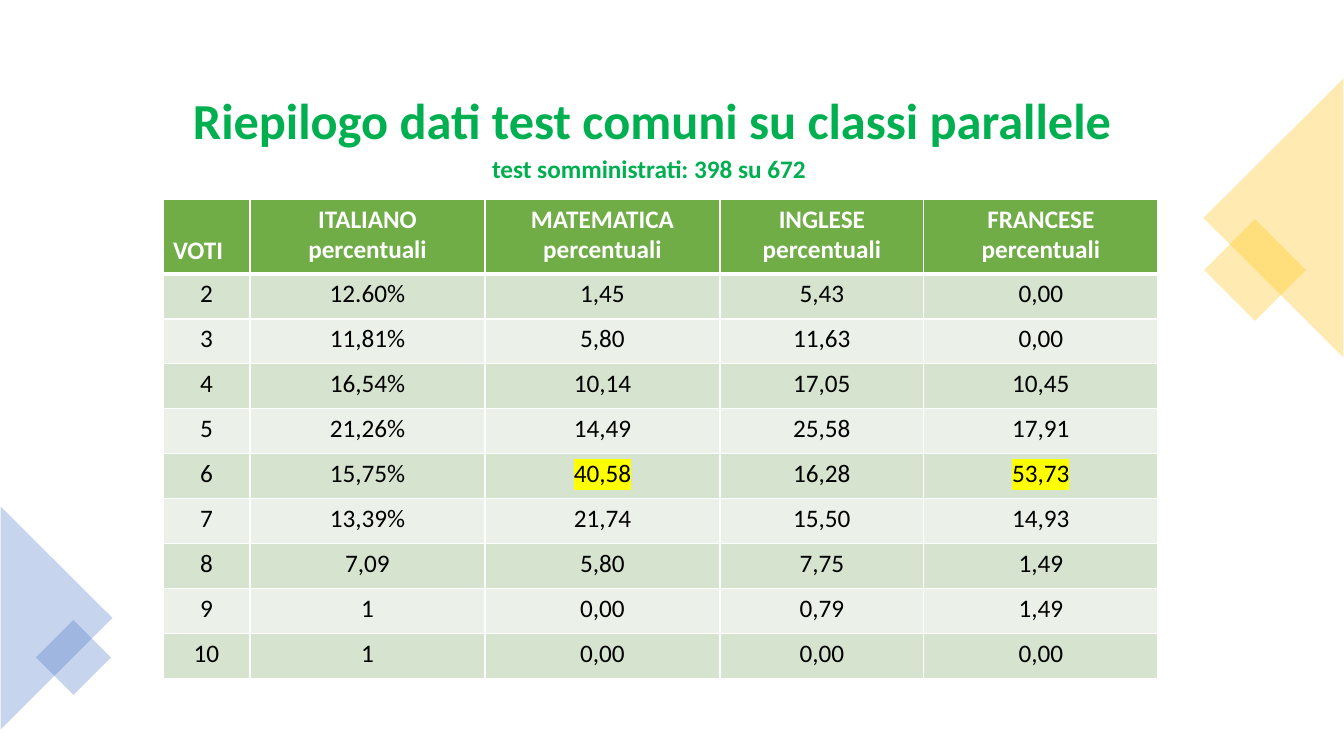
from dataclasses import dataclass
from typing import Optional

from lxml.etree import SubElement
from pptx import Presentation
from pptx.dml.color import RGBColor
from pptx.enum.shapes import MSO_SHAPE
from pptx.enum.text import MSO_ANCHOR, MSO_AUTO_SIZE, PP_ALIGN
from pptx.oxml import parse_xml
from pptx.oxml.ns import nsdecls, qn
from pptx.util import Emu, Pt

PX_PER_INCH = 100.8
GREEN, YELLOW, BLUE = "00B050", "FFC000", "4472C4"
HEADER_FILL, BANDS = "70AD47", ("D5E3CF", "EBF1E9")


def px(n: int) -> Emu:
    return Emu(round(n * 914400 / PX_PER_INCH))


def rgb(color: str) -> RGBColor:
    return RGBColor.from_string(color)


def write(tf, text: str, *, size: int = 18, color: str = "000000", bold: bool = False,
          align=PP_ALIGN.CENTER, spacing: Optional[float] = None,
          highlight: Optional[str] = None) -> None:
    """Fill a text frame, one paragraph for each line of text."""
    for i, line in enumerate(text.split("\n")):
        p = tf.paragraphs[0] if i == 0 else tf.add_paragraph()
        p.alignment = align
        if spacing:
            p.line_spacing = spacing
        r = p.add_run()
        r.text = line
        r.font.name, r.font.size, r.font.bold = "Calibri", Pt(size), bold
        r.font.color.rgb = rgb(color)
        if highlight:
            mark = parse_xml(f'<a:highlight {nsdecls("a")}><a:srgbClr val="{highlight}"/></a:highlight>')
            r.font.fill._xPr.find(qn("a:solidFill")).addnext(mark)


@dataclass
class Decoration:
    kind: MSO_SHAPE
    left: int
    top: int
    width: int
    height: int
    rotation: int
    color: str


DECORATIONS = [
    Decoration(MSO_SHAPE.RECTANGLE, 1219, 234, 72, 72, 45, YELLOW),
    Decoration(MSO_SHAPE.ISOSCELES_TRIANGLE, 1134, 148, 279, 140, 270, YELLOW),
    Decoration(MSO_SHAPE.ISOSCELES_TRIANGLE, -55, 562, 223, 112, 90, BLUE),
    Decoration(MSO_SHAPE.RECTANGLE, 47, 631, 53, 53, 45, BLUE),
]


def draw_decoration(s, d: Decoration) -> None:
    sp = s.shapes.add_shape(d.kind, px(d.left), px(d.top), px(d.width), px(d.height))
    sp.rotation = d.rotation
    sp.shadow.inherit = False
    sp.line.fill.background()
    sp.fill.solid()
    sp.fill.fore_color.rgb = rgb(d.color)
    clr = sp._element.spPr.find(qn("a:solidFill")).find(qn("a:srgbClr"))
    SubElement(clr, qn("a:alpha")).set("val", "30000")


HEADERS = ["VOTI"] + [f"{subject}\npercentuali"
                      for subject in ("ITALIANO", "MATEMATICA", "INGLESE", "FRANCESE")]
RESULTS = [
    ("2", "12.60%", "1,45", "5,43", "0,00"),
    ("3", "11,81%", "5,80", "11,63", "0,00"),
    ("4", "16,54%", "10,14", "17,05", "10,45"),
    ("5", "21,26%", "14,49", "25,58", "17,91"),
    ("6", "15,75%", "40,58", "16,28", "53,73"),
    ("7", "13,39%", "21,74", "15,50", "14,93"),
    ("8", "7,09", "5,80", "7,75", "1,49"),
    ("9", "1", "0,00", "0,79", "1,49"),
    ("10", "1", "0,00", "0,00", "0,00"),
]
PEAKS = ("40,58", "53,73")
COL_WIDTHS = (87, 235, 235, 204, 234)
HEADER_HEIGHT, ROW_HEIGHT = 75, 45


def style_cell(cell, fill: str, top: int, bottom: int) -> None:
    """Plain fill with white borders; top and bottom are widths in points."""
    cell.fill.solid()
    cell.fill.fore_color.rgb = rgb(fill)
    tcPr = cell._tc.get_or_add_tcPr()
    for i, (side, width) in enumerate((("L", 1), ("R", 1), ("T", top), ("B", bottom))):
        tcPr.insert(i, parse_xml(
            f'<a:ln{side} {nsdecls("a")} w="{Pt(width)}"><a:solidFill>'
            f'<a:srgbClr val="FFFFFF"/></a:solidFill></a:ln{side}>'))


def draw_table(s) -> None:
    height = HEADER_HEIGHT + ROW_HEIGHT * len(RESULTS)
    table = s.shapes.add_table(len(RESULTS) + 1, len(HEADERS), px(163), px(199),
                               px(sum(COL_WIDTHS)), px(height)).table
    table.horz_banding = False
    for column, width in zip(table.columns, COL_WIDTHS):
        column.width = px(width)
    for i, values in enumerate([HEADERS, *RESULTS]):
        header = i == 0
        table.rows[i].height = px(HEADER_HEIGHT if header else ROW_HEIGHT)
        for j, value in enumerate(values):
            cell = table.cell(i, j)
            style_cell(cell, HEADER_FILL if header else BANDS[(i - 1) % 2],
                       top=3 if i == 1 else 1, bottom=3 if header else 1)
            write(cell.text_frame, value, bold=header,
                  color="FFFFFF" if header else "000000",
                  align=PP_ALIGN.LEFT if value == "VOTI" else PP_ALIGN.CENTER,
                  highlight="FFFF00" if value in PEAKS else None)
    # The grade heading lines up with the second line of the others
    grade = table.cell(0, 0)
    grade.vertical_anchor = MSO_ANCHOR.BOTTOM
    grade.margin_bottom = px(8)


def main() -> None:
    prs = Presentation()
    prs.slide_width, prs.slide_height = px(1344), px(756)
    s = prs.slides.add_slide(prs.slide_layouts[5])

    # Title
    title = s.shapes.title
    title.left, title.top, title.width, title.height = px(51), px(75), px(1203), px(125)
    tf = title.text_frame
    tf.word_wrap, tf.auto_size = True, MSO_AUTO_SIZE.NONE
    tf.vertical_anchor = MSO_ANCHOR.MIDDLE
    tf.margin_bottom = px(33)
    write(tf, "Riepilogo dati test comuni su classi parallele",
          size=36, color=GREEN, bold=True, spacing=0.9)

    # Corner decorations
    for decoration in DECORATIONS:
        draw_decoration(s, decoration)

    # Results
    draw_table(s)

    # Subtitle
    tf = s.shapes.add_textbox(px(163), px(148), px(972), px(40)).text_frame
    tf.word_wrap = True
    write(tf, "test somministrati: 398 su 672", color=GREEN, bold=True)

    prs.save("out.pptx")


if __name__ == "__main__":
    main()
